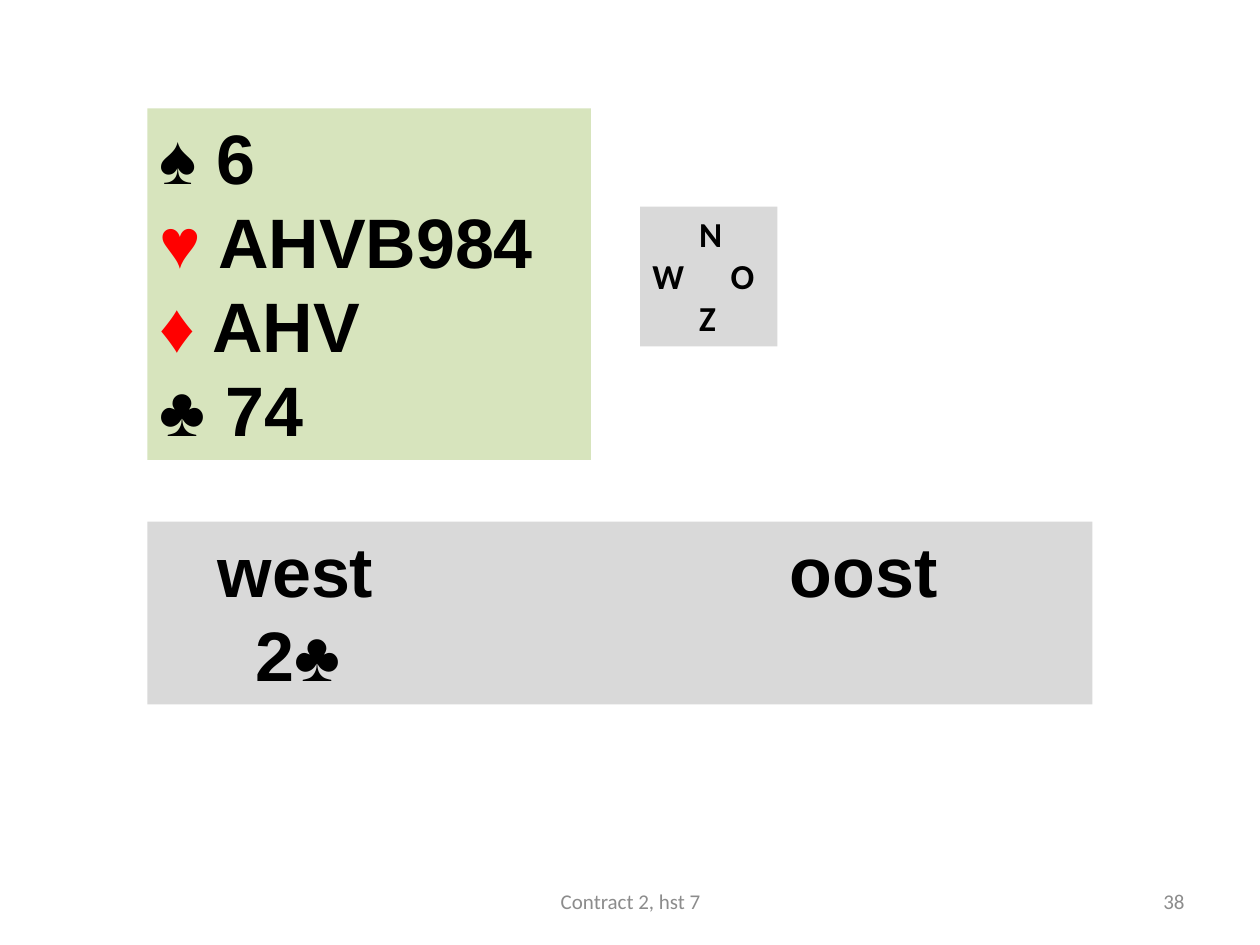
from dataclasses import dataclass

from lxml import etree
from pptx import Presentation
from pptx.dml.color import RGBColor
from pptx.enum.text import MSO_ANCHOR, MSO_AUTO_SIZE, PP_ALIGN
from pptx.oxml.ns import qn
from pptx.util import Inches, Pt

LEFT, CENTER, RIGHT = PP_ALIGN.LEFT, PP_ALIGN.CENTER, PP_ALIGN.RIGHT
TOP, MIDDLE = MSO_ANCHOR.TOP, MSO_ANCHOR.MIDDLE
GROW, FIXED = MSO_AUTO_SIZE.SHAPE_TO_FIT_TEXT, MSO_AUTO_SIZE.NONE


@dataclass(frozen=True)
class TextStyle:
    """Font, size, weight and colour of a run."""
    font: str
    size: int
    bold: bool
    color: RGBColor


@dataclass(frozen=True)
class Theme:
    """Colours and text styles of the slide."""
    green = RGBColor(0xD7, 0xE4, 0xBD)
    gray = RGBColor(0xD9, 0xD9, 0xD9)
    red = RGBColor(0xFF, 0x00, 0x00)
    black = RGBColor(0x00, 0x00, 0x00)
    cards = TextStyle("Arial", 40, True, black)
    compass = TextStyle("Calibri", 20, True, black)
    footer = TextStyle("Calibri", 12, False, RGBColor(0x8C, 0x8C, 0x8C))


THEME = Theme()
RED_SUITS = "♥♦"


def add_run(paragraph, text, style, color=None):
    """Append one styled run to a paragraph."""
    run = paragraph.add_run()
    run.text = text
    run.font.name = style.font
    run.font.size = Pt(style.size)
    run.font.bold = style.bold
    run.font.color.rgb = color or style.color


def set_tab_stops(paragraph, stops):
    """Give a paragraph left-aligned tab stops, in inches."""
    tab_list = etree.SubElement(paragraph._p.get_or_add_pPr(), qn("a:tabLst"))
    for stop in stops:
        etree.SubElement(tab_list, qn("a:tab"), pos=str(Inches(stop)), algn="l")


def add_frame(slide, box, fill=None, anchor=TOP):
    """Add a wrapping text box; a filled one grows with its text."""
    frame_box = slide.shapes.add_textbox(*map(Inches, box))
    frame = frame_box.text_frame
    frame.word_wrap = True
    frame.vertical_anchor = anchor
    frame.auto_size = GROW if fill else FIXED
    if fill:
        frame_box.fill.solid()
        frame_box.fill.fore_color.rgb = fill
    return frame


def add_lines(frame, count):
    """Return the given number of paragraphs of a new frame."""
    return [frame.paragraphs[0]] + [frame.add_paragraph() for _ in range(count - 1)]


def add_hand(slide, box, holdings):
    """Show a hand with one suit per line."""
    frame = add_frame(slide, box, THEME.green)
    for line, (suit, cards) in zip(add_lines(frame, len(holdings)), holdings):
        suit_color = THEME.red if suit in RED_SUITS else THEME.black
        add_run(line, suit, THEME.cards, suit_color)
        add_run(line, f" {cards}", THEME.cards)


def add_tabbed_panel(slide, box, rows, style):
    """Show rows of text, each set out on its own tab stops."""
    frame = add_frame(slide, box, THEME.gray)
    for line, (text, stops) in zip(add_lines(frame, len(rows)), rows):
        set_tab_stops(line, stops)
        add_run(line, text, style)


def add_footer(slide, box, text, alignment):
    """Add a small line at the foot of the slide."""
    line = add_frame(slide, box, anchor=MIDDLE).paragraphs[0]
    line.alignment = alignment
    add_run(line, text, THEME.footer)


def main():
    """Build the bidding slide and save it."""
    presentation = Presentation()
    presentation.slide_width, presentation.slide_height = Inches(10), Inches(7.5)
    slide = presentation.slides.add_slide(presentation.slide_layouts[6])

    holdings = [("♠", "6"), ("♥", "AHVB984"), ("♦", "AHV"), ("♣", "74")]
    add_hand(slide, (1.17, 0.86, 3.52, 2.79), holdings)

    compass = [("\tN", [0.37]), ("W\tO", [0.62]), ("\tZ", [0.37])]
    add_tabbed_panel(slide, (5.08, 1.64, 1.09, 1.11), compass, THEME.compass)

    bidding = [("\twest\toost", [0.46, 5]), ("\t2♣", [0.76])]
    add_tabbed_panel(slide, (1.17, 4.14, 7.5, 1.45), bidding, THEME.cards)

    add_footer(slide, (7.17, 6.95, 2.33, 0.4), "38", RIGHT)
    add_footer(slide, (3.42, 6.95, 3.17, 0.4), "Contract 2, hst 7", CENTER)
    presentation.save("out.pptx")


if __name__ == "__main__":
    main()
